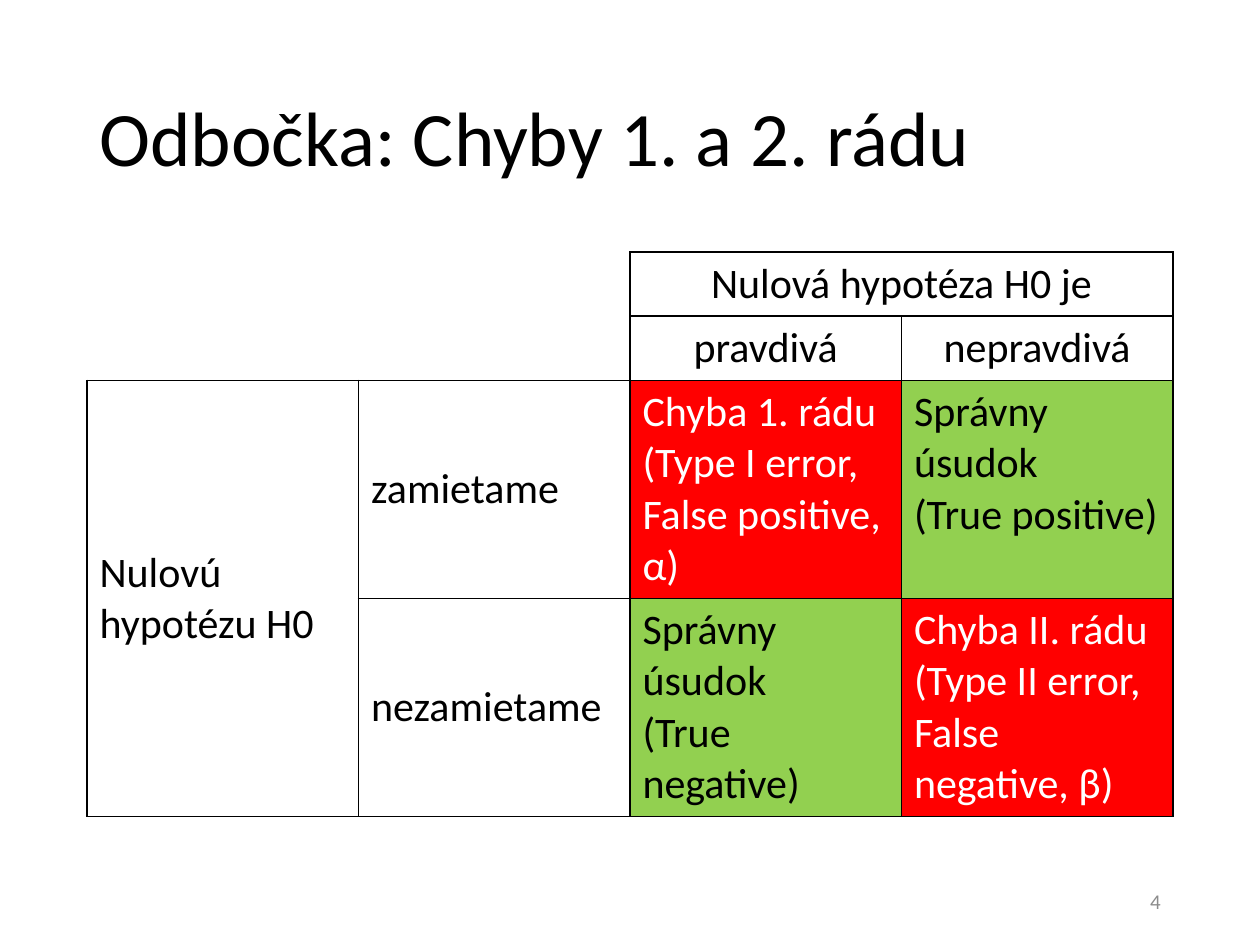
"""Build a slide with a table of type I and type II errors."""
from dataclasses import dataclass

from lxml import etree
from pptx import Presentation
from pptx.dml.color import RGBColor
from pptx.enum.text import MSO_ANCHOR, MSO_AUTO_SIZE, PP_ALIGN
from pptx.oxml.ns import qn
from pptx.util import Inches, Pt

LEFT, CENTER, RIGHT = PP_ALIGN.LEFT, PP_ALIGN.CENTER, PP_ALIGN.RIGHT
TOP, MIDDLE = MSO_ANCHOR.TOP, MSO_ANCHOR.MIDDLE
NO_AUTOFIT = MSO_AUTO_SIZE.NONE
FONT = "Calibri"
BLACK, WHITE, GRAY = "000000", "FFFFFF", "8C8C8C"
ERROR, CORRECT = "FF0000", "92D050"
MARGIN, CONTENT_WIDTH = 0.69, 8.62
ROW_HEIGHTS = (0.51, 0.51, 1.73, 1.73)
COLUMN_COUNT = 4


@dataclass(frozen=True)
class Block:
    row: int
    column: int
    lines: tuple[str, ...] = ()
    rows: int = 1
    columns: int = 1
    align: PP_ALIGN = LEFT
    anchor: MSO_ANCHOR = MIDDLE
    fill: str | None = None
    color: str = BLACK
    edges: str = "LRTB"


def verdict(row: int, column: int, name: str, detail: str, correct: bool) -> Block:
    """Describe one outcome of the test."""
    return Block(row, column, (name, detail), anchor=TOP,
                 fill=CORRECT if correct else ERROR, color=BLACK if correct else WHITE)


BLOCKS = (
    Block(0, 0, rows=2, columns=2, edges="RB"),
    Block(0, 2, ("Nulová hypotéza H0 je",), columns=2, align=CENTER),
    Block(1, 2, ("pravdivá",), align=CENTER, anchor=TOP),
    Block(1, 3, ("nepravdivá",), align=CENTER, anchor=TOP),
    Block(2, 0, ("Nulovú hypotézu H0",), rows=2),
    Block(2, 1, ("zamietame",)),
    Block(3, 1, ("nezamietame",)),
    verdict(2, 2, "Chyba 1. rádu", "(Type I error, False positive, α)", False),
    verdict(2, 3, "Správny úsudok", "(True positive)", True),
    verdict(3, 2, "Správny úsudok", "(True negative)", True),
    verdict(3, 3, "Chyba II. rádu", "(Type II error, False negative, β)", False),
)


def rgb(value: str) -> RGBColor:
    """Turn a hex string into a colour."""
    return RGBColor.from_string(value)


def write(frame, lines: tuple[str, ...], size: float, color: str, align: PP_ALIGN) -> None:
    """Write each line as a paragraph with one run."""
    for index, line in enumerate(lines):
        paragraph = frame.add_paragraph() if index else frame.paragraphs[0]
        paragraph.alignment = align
        run = paragraph.add_run()
        run.text = line
        run.font.name = FONT
        run.font.size = Pt(size)
        run.font.color.rgb = rgb(color)


def draw_borders(cell, edges: str) -> None:
    """Line the given edges of a cell and clear the others."""
    properties = cell._tc.get_or_add_tcPr()
    for edge in "LRTB":
        line = etree.SubElement(properties, qn(f"a:ln{edge}"), w=str(Pt(1)))
        if edge in edges:
            fill = etree.SubElement(line, qn("a:solidFill"))
            etree.SubElement(fill, qn("a:srgbClr"), val=BLACK)
        else:
            etree.SubElement(line, qn("a:noFill"))


def draw_block(table, block: Block) -> None:
    """Draw a cell or a merged group of cells."""
    last_row = block.row + block.rows - 1
    last_column = block.column + block.columns - 1
    for row in range(block.row, last_row + 1):
        for column in range(block.column, last_column + 1):
            origin = row == block.row and column == block.column
            outer = {"L": column == block.column, "R": column == last_column,
                     "T": row == block.row, "B": row == last_row}
            cell = table.cell(row, column)
            draw_borders(cell, "".join(e for e in block.edges if origin or outer[e]))
            if block.fill:
                cell.fill.solid()
                cell.fill.fore_color.rgb = rgb(block.fill)
            else:
                cell.fill.background()
    first = table.cell(block.row, block.column)
    if block.rows * block.columns > 1:
        first.merge(table.cell(last_row, last_column))
    first.vertical_anchor = block.anchor
    write(first.text_frame, block.lines, 24, block.color, block.align)


def main() -> None:
    """Build and save the slide."""
    deck = Presentation()
    deck.slide_width, deck.slide_height = Inches(10), Inches(7.5)
    slide = deck.slides.add_slide(deck.slide_layouts[5])

    title = slide.shapes.title
    title.left, title.top = Inches(MARGIN), Inches(0.4)
    title.width, title.height = Inches(CONTENT_WIDTH), Inches(1.45)
    title.text_frame.auto_size = NO_AUTOFIT
    title.text_frame.vertical_anchor = MIDDLE
    write(title.text_frame, ("Odbočka: Chyby 1. a 2. rádu",), 44, BLACK, LEFT)
    title.text_frame.paragraphs[0].line_spacing = 0.9

    errors = slide.shapes.add_table(
        len(ROW_HEIGHTS), COLUMN_COUNT, Inches(MARGIN), Inches(2),
        Inches(CONTENT_WIDTH), Inches(sum(ROW_HEIGHTS))).table
    errors.first_row = errors.horz_banding = False
    for row, height in zip(errors.rows, ROW_HEIGHTS):
        row.height = Inches(height)
    for block in BLOCKS:
        draw_block(errors, block)

    page_number = slide.shapes.add_textbox(
        Inches(7.06), Inches(6.95), Inches(2.25), Inches(0.4)).text_frame
    page_number.word_wrap = True
    page_number.vertical_anchor = MIDDLE
    write(page_number, ("4",), 12, GRAY, RIGHT)

    deck.save("out.pptx")


if __name__ == "__main__":
    main()
